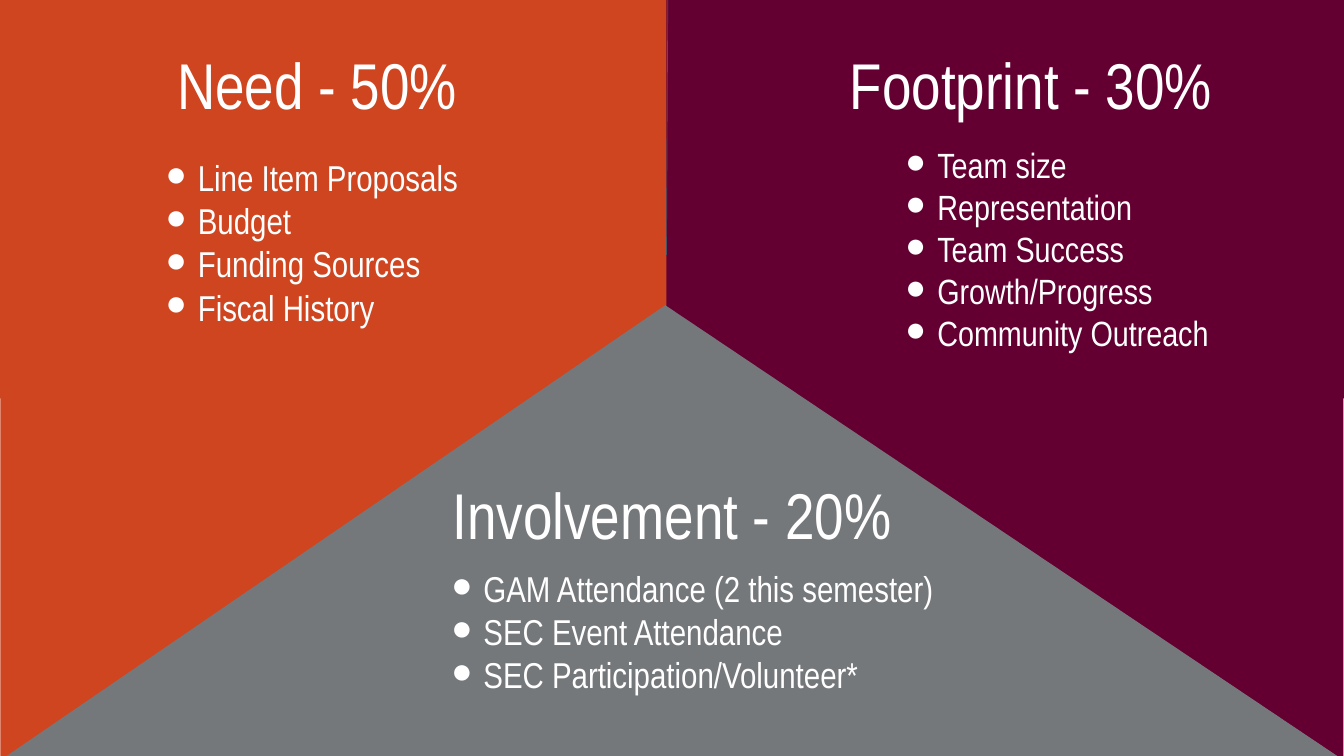
"""Builds a slide that splits a funding score into three weighted areas."""
from dataclasses import dataclass

from lxml import etree
from pptx import Presentation
from pptx.dml.color import RGBColor
from pptx.enum.shapes import MSO_CONNECTOR, MSO_SHAPE
from pptx.enum.text import MSO_ANCHOR, MSO_AUTO_SIZE, PP_ALIGN
from pptx.oxml.ns import qn
from pptx.util import Inches, Pt

RECT = MSO_SHAPE.RECTANGLE
WEDGE = MSO_SHAPE.RIGHT_TRIANGLE
PEAK = MSO_SHAPE.ISOSCELES_TRIANGLE
LINE = MSO_CONNECTOR.STRAIGHT
TOP = MSO_ANCHOR.TOP
GROW = MSO_AUTO_SIZE.SHAPE_TO_FIT_TEXT
LEFT, CENTER = PP_ALIGN.LEFT, PP_ALIGN.CENTER


@dataclass(frozen=True)
class Theme:
    font: str = "Arial Narrow"
    white: str = "FFFFFF"
    orange: str = "CF4520"
    maroon: str = "630031"
    gray: str = "75787B"
    slate: str = "44546A"
    head: int = 72
    item: int = 40
    small: int = 39


def write(par, text, *, font, size, color, align=LEFT, bullet=None):
    par.alignment = align
    par.line_spacing = 1.0
    par.space_before = par.space_after = Pt(0)
    props = par._p.get_or_add_pPr()
    indent = Inches(0.5) if bullet else 0
    props.set("marL", str(indent))
    props.set("indent", str(-indent))
    if bullet:
        tint = etree.SubElement(props, qn("a:buClr"))
        etree.SubElement(tint, qn("a:srgbClr"), val=color)
        etree.SubElement(props, qn("a:buFont"), typeface=font)
        etree.SubElement(props, qn("a:buChar"), char=bullet)
    else:
        etree.SubElement(props, qn("a:buNone"))
    run = par.add_run()
    run.text = text
    run.font.name, run.font.size = font, Pt(size)
    run.font.bold = False
    run.font.color.rgb = RGBColor.from_string(color)


class Deck:
    def __init__(self, theme):
        self.theme = theme
        self.file = Presentation()
        self.file.slide_width = Inches(20.79)
        self.file.slide_height = Inches(11.69)
        self.slide = self.file.slides.add_slide(self.file.slide_layouts[4])
        self.slots = {p.placeholder_format.idx: p for p in self.slide.placeholders}

    def area(self, kind, box, color, turn=0, flip=False):
        shape = self.slide.shapes.add_shape(kind, *map(Inches, box))
        shape.shadow.inherit = False
        shape.fill.solid()
        shape.fill.fore_color.rgb = RGBColor.from_string(color)
        shape.line.fill.background()
        shape.rotation = turn
        if flip:
            shape._element.spPr.find(qn("a:xfrm")).set("flipH", "1")
        return shape

    def rule(self, start, end, color, width):
        line = self.slide.shapes.add_connector(LINE, *map(Inches, start + end))
        line.line.color.rgb = RGBColor.from_string(color)
        line.line.width = Pt(width)
        etree.SubElement(line._element.spPr, qn("a:effectLst"))

    def block(self, slot, box, lines, size, **style):
        spot = tuple(map(Inches, box))
        if slot is None:
            shape = self.slide.shapes.add_textbox(*spot)
        else:
            shape = self.slots[slot]
            shape.left, shape.top, shape.width, shape.height = spot
            self.slide.shapes._spTree.append(shape._element)
        frame = shape.text_frame
        frame.word_wrap, frame.auto_size = True, GROW
        frame.vertical_anchor = TOP
        frame.margin_left = frame.margin_right = Inches(0.1)
        frame.margin_top = frame.margin_bottom = Inches(0.1)
        for num, text in enumerate(lines):
            par = frame.add_paragraph() if num else frame.paragraphs[0]
            write(par, text, font=self.theme.font, size=size,
                  color=self.theme.white, **style)

    def head(self, slot, box, text):
        self.block(slot, box, [text], self.theme.head, align=CENTER)

    def items(self, slot, box, lines, size):
        self.block(slot, box, lines, size, bullet="●")


def main():
    theme = Theme()
    deck = Deck(theme)
    deck.area(WEDGE, (13.25, 4.23, 6.04, 9.02), theme.maroon, turn=270, flip=True)
    deck.area(WEDGE, (1.32, 4.68, 5.88, 8.51), theme.orange, turn=90)
    deck.area(RECT, (0, 0, 10.35, 6.16), theme.orange)
    deck.area(RECT, (10.31, 0, 10.48, 6.16), theme.maroon)
    peak = deck.area(PEAK, (0, 4.72, 20.79, 7.04), theme.gray)
    peak.adjustments[0] = 0.495
    deck.rule((10.33, 0), (10.31, 3.94), theme.slate, 0.75)

    deck.head(0, (2.28, 0.6, 5.25, 1.41), "Need - 50%")
    deck.head(1, (12.36, 0.6, 7.18, 1.41), "Footprint - 30%")
    deck.head(3, (6.54, 7.24, 7.71, 1.41), "Involvement - 20%")

    deck.items(None, (6.88, 8.66, 7.89, 2.22), [
        "GAM Attendance (2 this semester)", "SEC Event Attendance",
        "SEC Participation/Volunteer*"], theme.item)
    deck.items(2, (2.46, 2.31, 5.4, 2.9), [
        "Line Item Proposals", "Budget", "Funding Sources",
        "Fiscal History"], theme.item)
    deck.items(4, (13.9, 2.12, 5.4, 3.48), [
        "Team size", "Representation", "Team Success", "Growth/Progress",
        "Community Outreach"], theme.small)
    deck.file.save("out.pptx")


if __name__ == "__main__":
    main()
